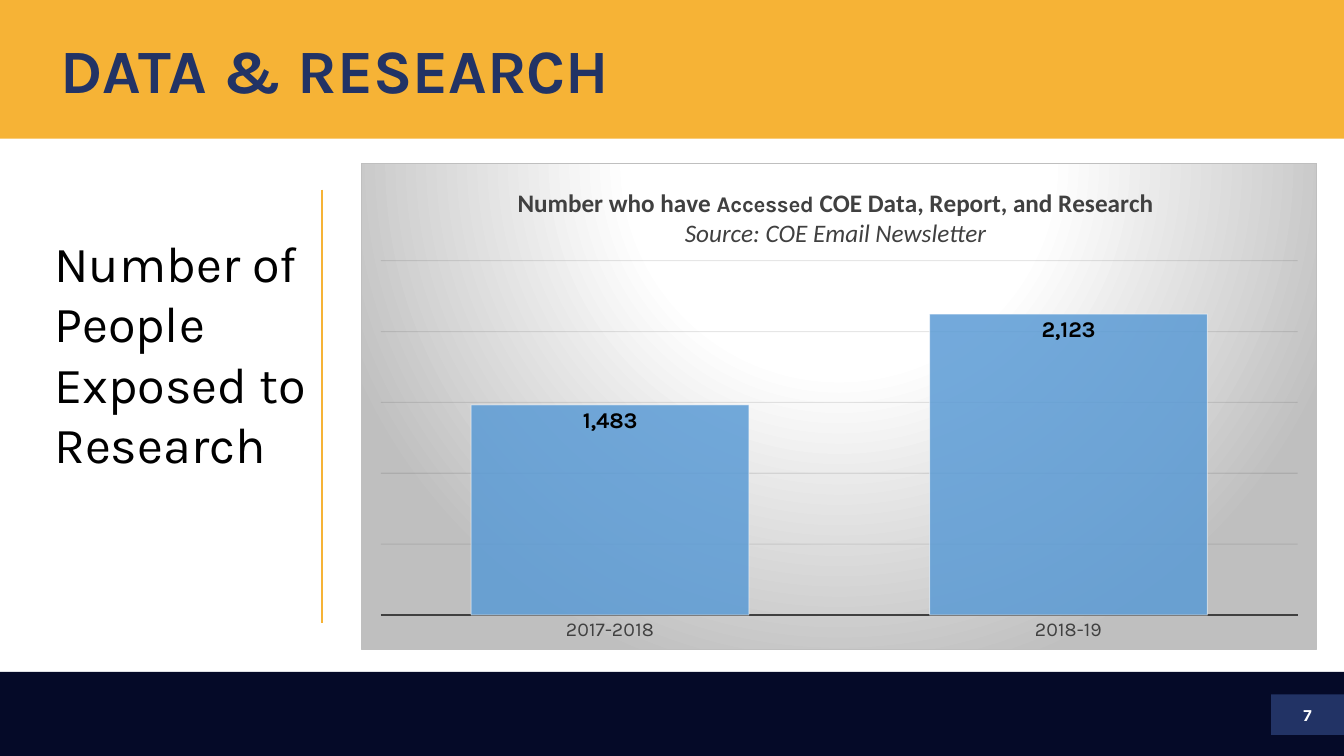
from dataclasses import dataclass
from pptx import Presentation
from pptx.chart.data import CategoryChartData
from pptx.dml.color import RGBColor
from pptx.enum.chart import XL_CHART_TYPE, XL_LABEL_POSITION, XL_TICK_MARK
from pptx.enum.shapes import MSO_CONNECTOR, MSO_SHAPE
from pptx.enum.text import MSO_ANCHOR, MSO_AUTO_SIZE, PP_ALIGN
from pptx.oxml import parse_xml
from pptx.oxml.ns import nsdecls, qn
from pptx.util import Pt


@dataclass(frozen=True)
class Theme:
    gold: str = "F6B336"
    night: str = "050A28"
    navy: str = "223365"
    blue: str = "5B9BD5"
    white: str = "FFFFFF"
    black: str = "000000"
    dark: str = "404040"
    grid: str = "0D0D0D"
    gray: str = "BFBFBF"
    head: str = "Karla"
    body: str = "Calibri"
    title: int = 44
    side: int = 36
    caption: int = 18
    label: int = 16
    axis: int = 14
    number: int = 12
    small: int = 10


class Board:
    def __init__(self, slide, theme):
        self.slide = slide
        self.theme = theme

    def style(self, font, size, color, face=None, bold=False, italic=False):
        font.size = Pt(size)
        font.name = face or self.theme.head
        font.bold = bold
        font.italic = italic
        font.color.rgb = RGBColor.from_string(color)

    def stroke(self, line, color, width):
        line.color.rgb = RGBColor.from_string(color)
        line.width = Pt(width)

    def block(self, box, color):
        shape = self.slide.shapes.add_shape(MSO_SHAPE.RECTANGLE, *map(Pt, box))
        shape.shadow.inherit = False
        shape.fill.solid()
        shape.fill.fore_color.rgb = RGBColor.from_string(color)
        shape.line.fill.background()

    def text(self, box, words, size, color, bold=False,
             anchor=MSO_ANCHOR.MIDDLE, align=PP_ALIGN.LEFT):
        frame = self.slide.shapes.add_textbox(*map(Pt, box)).text_frame
        frame.word_wrap = True
        frame.vertical_anchor = anchor
        frame.text = words
        par = frame.paragraphs[0]
        par.alignment = align
        self.style(par.runs[0].font, size, color, bold=bold)
        return frame

    def rule(self, x, top, bottom, color):
        line = self.slide.shapes.add_connector(
            MSO_CONNECTOR.STRAIGHT, Pt(x), Pt(top), Pt(x), Pt(bottom))
        self.stroke(line.line, color, 1.5)
        line.element.spPr.append(
            parse_xml(f"<a:effectLst {nsdecls('a')}/>"))

    def columns(self, box, cats, values):
        data = CategoryChartData(number_format="#,##0")
        data.categories = cats
        data.add_series("Series 1", values)
        chart = self.slide.shapes.add_chart(
            XL_CHART_TYPE.COLUMN_CLUSTERED, *map(Pt, box), data).chart
        chart.has_legend = False
        self.style(chart.font, self.theme.small, self.theme.black,
                   self.theme.body)
        self.axes(chart)
        self.bars(chart)
        self.backdrop(chart)
        return chart

    def axes(self, chart):
        theme = self.theme
        cat, val = chart.category_axis, chart.value_axis
        cat.major_tick_mark = XL_TICK_MARK.NONE
        self.style(cat.tick_labels.font, theme.axis, theme.dark)
        self.stroke(cat.format.line, theme.dark, 1.5)
        val.visible = False
        val.minimum_scale, val.maximum_scale, val.major_unit = 0, 2500, 500
        val.has_major_gridlines = True
        self.stroke(val.major_gridlines.format.line, theme.grid, 0.75)
        self.fade(chart, "c:majorGridlines/c:spPr/a:ln", 10)

    def bars(self, chart):
        theme = self.theme
        plot = chart.plots[0]
        plot.gap_width = 65
        plot.vary_by_categories = False
        series = plot.series[0]
        series.format.fill.solid()
        series.format.fill.fore_color.rgb = RGBColor.from_string(theme.blue)
        self.stroke(series.format.line, theme.white, 0.75)
        self.fade(chart, "c:ser/c:spPr", 85)
        self.fade(chart, "c:ser/c:spPr/a:ln", 50)
        labels = series.data_labels
        labels.show_value = True
        labels.number_format = "#,##0"
        labels.number_format_is_linked = False
        labels.position = XL_LABEL_POSITION.INSIDE_END
        self.style(labels.font, theme.label, theme.black, bold=True)

    def fade(self, chart, owner, opacity):
        """Set the opacity, in percent, of the solid fill inside owner."""
        for color in chart.element.xpath(
                f".//{owner}/a:solidFill/a:srgbClr"):
            color.append(parse_xml(
                f'<a:alpha {nsdecls("a")} val="{opacity * 1000}"/>'))

    def backdrop(self, chart):
        theme = self.theme
        stops = "".join(
            f'<a:gs pos="{pos * 1000}"><a:srgbClr val="{color}"/></a:gs>'
            for pos, color in
            ((0, theme.white), (39, theme.white), (100, theme.gray)))
        chart.element.find(qn("c:chart")).addnext(parse_xml(
            f'<c:spPr {nsdecls("c", "a")}><a:gradFill>'
            f'<a:gsLst>{stops}</a:gsLst><a:path path="circle">'
            '<a:fillToRect l="50000" t="-80000" r="50000" b="180000"/>'
            '</a:path></a:gradFill><a:ln w="9525"><a:solidFill>'
            f'<a:srgbClr val="{theme.gray}"/></a:solidFill></a:ln></c:spPr>'))

    def caption(self, chart, lines):
        """Fill the chart title; each line is a list of (words, font options)."""
        frame = chart.chart_title.text_frame
        for index, line in enumerate(lines):
            par = frame.add_paragraph() if index else frame.paragraphs[0]
            for words, look in line:
                run = par.add_run()
                run.text = words
                self.style(run.font, **look)

    def place(self, host, index, **parts):
        """Give a chart part a manual layout in fractions of the chart."""
        for old in host.findall(qn("c:layout")):
            host.remove(old)
        inner = '<c:layoutTarget val="inner"/>' if "w" in parts else ""
        modes = "".join(f'<c:{key}Mode val="edge"/>' for key in "xy")
        sizes = "".join(f'<c:{key} val="{val}"/>'
                        for key, val in parts.items())
        host.insert(index, parse_xml(
            f'<c:layout {nsdecls("c")}><c:manualLayout>'
            f'{inner}{modes}{sizes}</c:manualLayout></c:layout>'))


def main():
    deck = Presentation()
    deck.slide_width, deck.slide_height = Pt(960), Pt(540)
    theme = Theme()
    board = Board(deck.slides.add_slide(deck.slide_layouts[6]), theme)

    board.block((0, 0, 960, 99), theme.gold)
    board.block((0, 480, 960, 60), theme.night)
    board.block((908, 496, 52, 29), theme.navy)
    title = board.text((36, 0, 885, 104.5), "DATA & RESEARCH",
                       theme.title, theme.navy, bold=True)
    title.paragraphs[0].line_spacing = 0.9
    board.text((908, 496, 52, 29), "7", theme.number, theme.white,
               bold=True, align=PP_ALIGN.CENTER)
    board.rule(229.8, 135.5, 445, theme.gold)
    side = board.text((31.7, 162, 198, 181.5),
                      "Number of People Exposed to Research",
                      theme.side, theme.black, anchor=MSO_ANCHOR.TOP)
    side.auto_size = MSO_AUTO_SIZE.SHAPE_TO_FIT_TEXT

    chart = board.columns((258, 116.5, 683, 347.5),
                          ("2017-2018", "2018-19"), (1483, 2123))
    plain = dict(size=theme.caption, color=theme.dark, face=theme.body)
    strong = dict(plain, bold=True)
    accent = dict(strong, size=theme.label, face=theme.head)
    board.caption(chart, [
        [("Number who have ", strong), ("Accessed", accent),
         (" COE Data, Report, and Research", strong)],
        [("Source: COE Email Newsletter", dict(plain, italic=True))],
    ])
    area = chart.element.find(qn("c:chart"))
    board.place(area.find(qn("c:title")), 1, x=0.16, y=0.04)
    board.place(area.find(qn("c:plotArea")), 0, x=0.02, y=0.2, w=0.96, h=0.73)
    deck.save("out.pptx")


if __name__ == "__main__":
    main()
